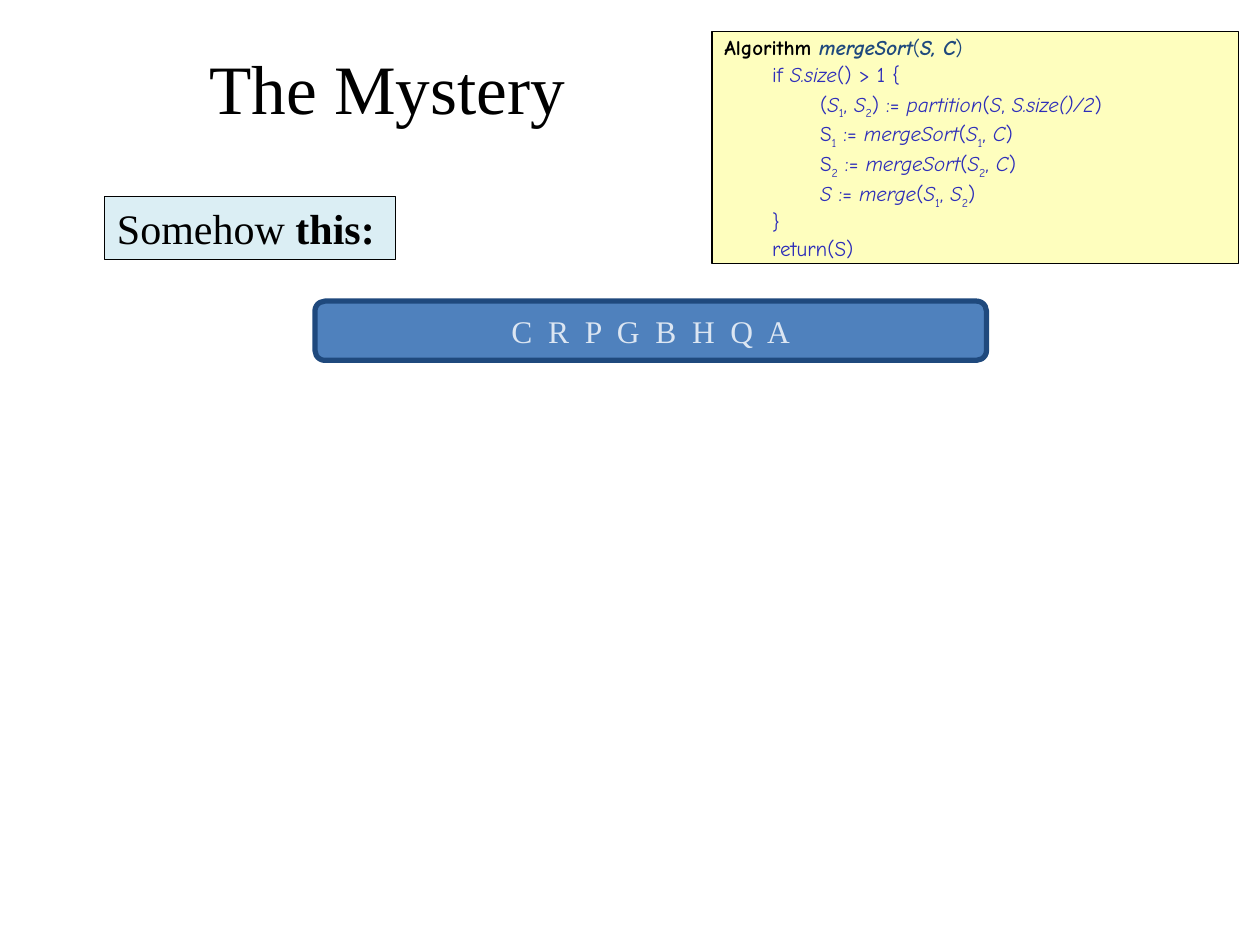
import pptx
import pptx.util
import pptx.dml.color
import pptx.enum.shapes
import pptx.enum.text
import pptx.oxml.ns
import lxml.etree

Inches = pptx.util.Inches
Pt = pptx.util.Pt
SHAPE = pptx.enum.shapes.MSO_SHAPE
ALIGN = pptx.enum.text.PP_ALIGN
ANCHOR = pptx.enum.text.MSO_ANCHOR
FIT = pptx.enum.text.MSO_AUTO_SIZE

COLORS = {
    "black": "000000", "navy": "1F497D", "code": "2D2DB9", "note": "FEFEBE",
    "label": "DBEEF4", "list": "4F81BD", "letters": "DCE6F2",
}
SERIF = "Times New Roman"
CODE_FONT = "Comic Neue"
CODE_INDENT = 0.38

S, S1, S2 = [("S", "i")], [("S", "i"), ("1", "s")], [("S", "i"), ("2", "s")]


def recursive_call(n):
    """Return the runs of the line that sorts half number n."""
    return [("S", ""), (n, "s"), (" := ", ""), ("mergeSort", "i"), ("(", ""),
            ("S", "i"), (n, "s"), (",", ""), (" C", "i"), (")", "")]


HEADING = [("Algorithm ", "b", "black"), ("mergeSort", "bi", "navy"), ("(", "", "navy"),
           ("S, C", "bi", "navy"), (")", "", "navy")]
CODE = [
    (0, HEADING),
    (1, [("if ", ""), ("S.size", "i"), ("() > 1 {", "")]),
    (2, [("(", "")] + S1 + [(", ", "")] + S2 + [(") := ", ""), ("partition", "i"), ("(", "")]
     + S + [(", ", ""), ("S.size()/2", "i"), (")", "")]),
    (2, recursive_call("1")),
    (2, recursive_call("2")),
    (2, S + [(" := ", ""), ("merge", "i"), ("(", "")] + S1 + [(",", ""), (" S", "i"),
                                                           ("2", "s"), (")", "")]),
    (1, [("}", "")]),
    (1, [("return(S)", "")]),
]


def rgb(name):
    """Return the named colour."""
    return pptx.dml.color.RGBColor.from_string(COLORS[name])


def add_run(p, text, size, font, color, style=""):
    """Add a run; style letters are b bold, i italic, s subscript."""
    r = p.add_run()
    r.text = text
    r.font.size = Pt(size)
    r.font.name = font
    r.font.color.rgb = rgb(color)
    r.font.bold = "b" in style
    r.font.italic = "i" in style
    if "s" in style:
        r._r.get_or_add_rPr().set("baseline", "-25000")


def add_box(slide, box, kind, fill, line, width):
    """Add a filled, outlined shape without a shadow."""
    sp = slide.shapes.add_shape(kind, *map(Inches, box))
    sp.shadow.inherit = False
    sp.fill.solid()
    sp.fill.fore_color.rgb = rgb(fill)
    sp.line.color.rgb = rgb(line)
    sp.line.width = Pt(width)
    return sp


def add_title(slide, box):
    """Place and format the title placeholder."""
    sp = slide.shapes.title
    sp.left, sp.top, sp.width, sp.height = map(Inches, box)
    tf = sp.text_frame
    tf.auto_size = FIT.NONE
    tf.vertical_anchor = ANCHOR.MIDDLE
    p = tf.paragraphs[0]
    p.alignment = ALIGN.CENTER
    add_run(p, "The Mystery", 39.6, SERIF, "black")


def add_letter_list(slide, box):
    """Add the rounded bar of unsorted letters."""
    tf = add_box(slide, box, SHAPE.ROUNDED_RECTANGLE, "list", "navy", 3).text_frame
    tf.word_wrap = False
    tf.vertical_anchor = ANCHOR.MIDDLE
    p = tf.paragraphs[0]
    p.alignment = ALIGN.CENTER
    add_run(p, "  ".join("CRPGBHQA"), 18, SERIF, "letters")


def set_paragraph_layout(p, depth):
    """Set the indent and the proportional spacing of a code line."""
    p.alignment = ALIGN.LEFT
    p.line_spacing = 0.9
    p.space_before = Pt(0)
    pPr = p._p.get_or_add_pPr()
    pPr.set("marL", str(Inches(CODE_INDENT * depth)))
    pPr.set("indent", "0")
    before = pPr.find(pptx.oxml.ns.qn("a:spcBef"))
    before.remove(before[0])
    lxml.etree.SubElement(before, pptx.oxml.ns.qn("a:spcPct"), val="20000")


def add_algorithm(slide, box):
    """Add the merge sort pseudocode note."""
    tf = add_box(slide, box, SHAPE.RECTANGLE, "note", "black", 0.75).text_frame
    tf.word_wrap = True
    tf.auto_size = FIT.SHAPE_TO_FIT_TEXT
    tf.vertical_anchor = ANCHOR.TOP
    for i, (depth, runs) in enumerate(CODE):
        p = tf.add_paragraph() if i else tf.paragraphs[0]
        set_paragraph_layout(p, depth)
        for text, style, *color in runs:
            add_run(p, text, 12, CODE_FONT, color[0] if color else "code", style)


def add_label(slide, box):
    """Add the label that introduces the list."""
    tf = add_box(slide, box, SHAPE.RECTANGLE, "label", "black", 0.75).text_frame
    tf.word_wrap = False
    tf.auto_size = FIT.SHAPE_TO_FIT_TEXT
    tf.vertical_anchor = ANCHOR.TOP
    p = tf.paragraphs[0]
    p.alignment = ALIGN.LEFT
    add_run(p, "Somehow ", 24, SERIF, "black")
    add_run(p, "this:", 24, SERIF, "black", "b")


def main():
    """Build and save the slide."""
    prs = pptx.Presentation()
    prs.slide_width, prs.slide_height = Inches(10), Inches(7.5)
    slide = prs.slides.add_slide(prs.slide_layouts[5])
    add_title(slide, (0.5, 0.3, 5.15, 0.78))
    add_letter_list(slide, (2.5, 2.39, 5.33, 0.47))
    add_algorithm(slide, (5.65, 0.25, 4.18, 1.84))
    add_label(slide, (0.83, 1.56, 2.31, 0.5))
    prs.save("out.pptx")


if __name__ == "__main__":
    main()
